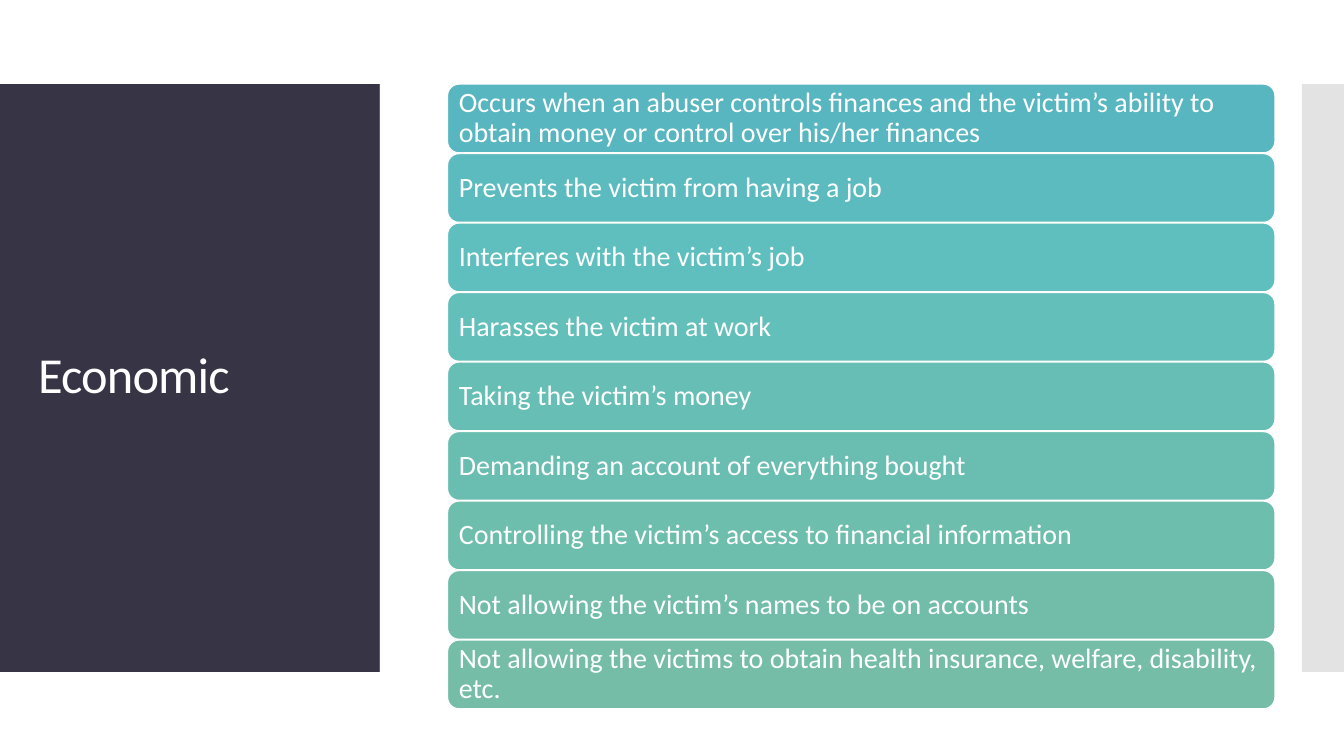
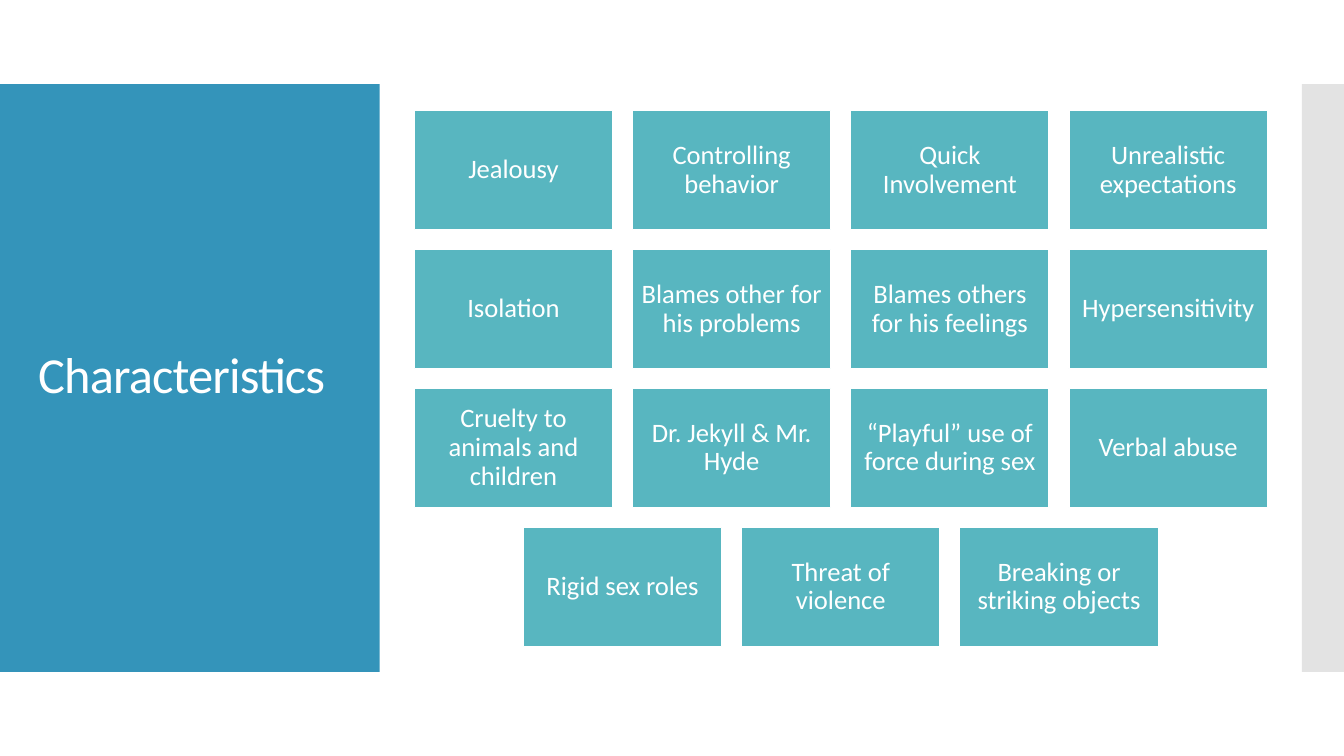
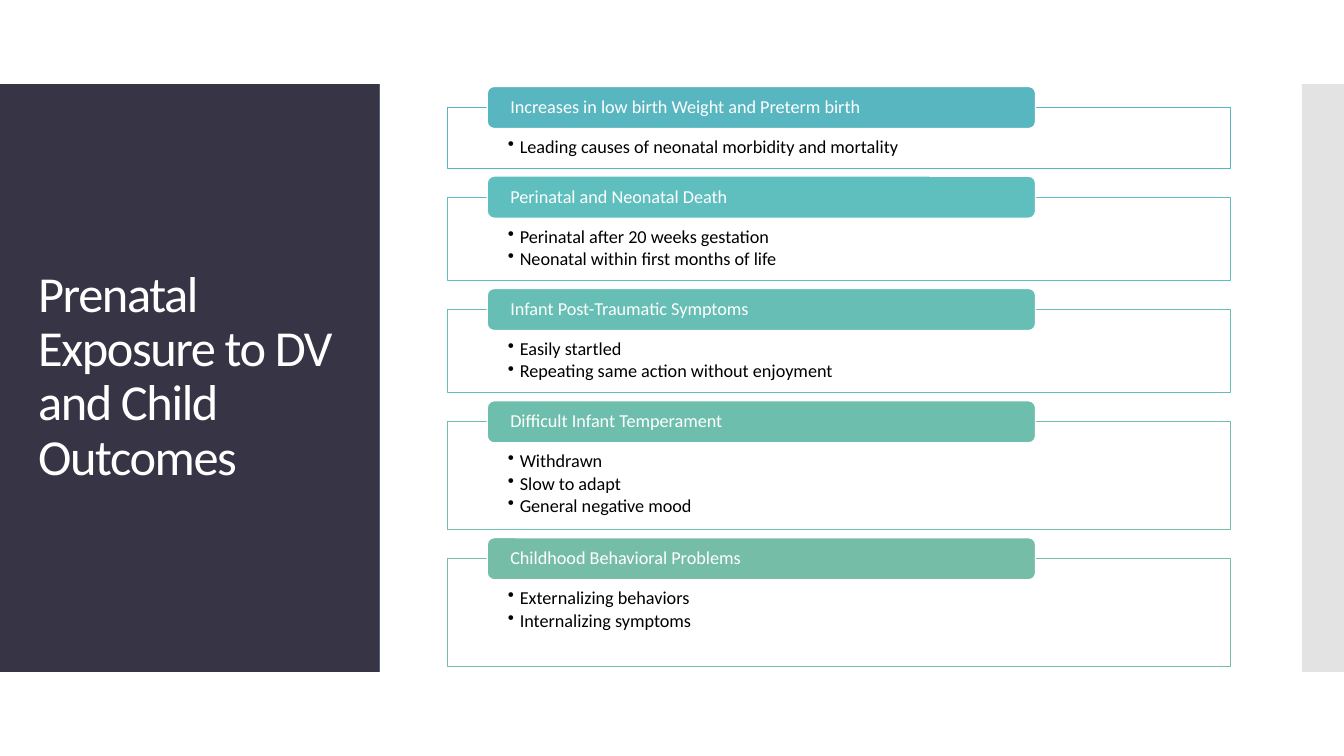
from pptx import Presentation
from pptx.dml.color import RGBColor
from pptx.enum.shapes import MSO_SHAPE
from pptx.enum.text import MSO_ANCHOR, MSO_AUTO_SIZE, PP_ALIGN
from pptx.oxml.ns import qn
from pptx.util import Cm, Pt
from lxml.etree import SubElement

FONT = "Calibri"
WHITE = RGBColor(0xFF, 0xFF, 0xFF)
BLACK = RGBColor(0, 0, 0)
BLUE = RGBColor(0x34, 0x94, 0xBA)
DARK = RGBColor(0x37, 0x35, 0x45)
GREY = RGBColor(0xC8, 0xC8, 0xC8)
RAMP = [
    RGBColor(0x58, 0xB6, 0xC0),
    RGBColor(0x5C, 0xBB, 0xBF),
    RGBColor(0x5F, 0xBF, 0xBF),
    RGBColor(0x63, 0xBF, 0xBA),
    RGBColor(0x67, 0xBE, 0xB5),
    RGBColor(0x6A, 0xBE, 0xB1),
    RGBColor(0x6E, 0xBE, 0xAD),
    RGBColor(0x72, 0xBD, 0xAA),
    RGBColor(0x75, 0xBD, 0xA7),
]
PANEL = (0, 2.12, 9.57, 14.81)
STRIP = (32.81, 2.12, 1.06, 14.81)
TITLE = (0.71, 3.12, 8.18, 12.78)

SIGNS = [
    "Occurs when an abuser controls finances and the victim’s ability to "
    "obtain money or control over his/her finances",
    "Prevents the victim from having a job",
    "Interferes with the victim’s job",
    "Harasses the victim at work",
    "Taking the victim’s money",
    "Demanding an account of everything bought",
    "Controlling the victim’s access to financial information",
    "Not allowing the victim’s names to be on accounts",
    "Not allowing the victims to obtain health insurance, welfare, disability, etc.",
]
TRAITS = [
    ["Jealousy", "Controlling behavior", "Quick Involvement", "Unrealistic expectations"],
    ["Isolation", "Blames other for his problems", "Blames others for his feelings",
     "Hypersensitivity"],
    ["Cruelty to animals and children", "Dr. Jekyll & Mr. Hyde",
     "“Playful” use of force during sex", "Verbal abuse"],
    ["Rigid sex roles", "Threat of violence", "Breaking or striking objects"],
]
EFFECTS = [
    ("Increases in low birth Weight and Preterm birth", 1.53,
     ["Leading causes of neonatal morbidity and mortality"]),
    ("Perinatal and Neonatal Death", 2.1,
     ["Perinatal after 20 weeks gestation", "Neonatal within first months of life"]),
    ("Infant Post-Traumatic Symptoms", 2.1,
     ["Easily startled", "Repeating same action without enjoyment"]),
    ("Difficult Infant Temperament", 2.72,
     ["Withdrawn", "Slow to adapt", "General negative mood"]),
    ("Childhood Behavioral Problems", 2.72,
     ["Externalizing behaviors", "Internalizing symptoms"]),
]


def add_box(slide, kind, box, fill, line=None, alpha=None):
    shape = slide.shapes.add_shape(kind, *map(Cm, box))
    shape.shadow.inherit = False
    shape.fill.solid()
    shape.fill.fore_color.rgb = fill
    if alpha:
        tone = shape.element.spPr.find(qn("a:solidFill"))[0]
        SubElement(tone, qn("a:alpha")).set("val", str(alpha * 1000))
    if line is None:
        shape.line.fill.background()
    else:
        shape.line.color.rgb = line
        shape.line.width = Pt(0.85)
    return shape


def set_text(shape, lines, size, color, pads, align=PP_ALIGN.LEFT, anchor=MSO_ANCHOR.MIDDLE):
    frame = shape.text_frame
    frame.word_wrap = True
    frame.auto_size = MSO_AUTO_SIZE.NONE
    frame.vertical_anchor = anchor
    frame.margin_left, frame.margin_top, frame.margin_right, frame.margin_bottom = map(Cm, pads)
    frame.text = "\n".join(lines)
    for para in frame.paragraphs:
        para.alignment = align
        para.line_spacing = 0.9
        for run in para.runs:
            run.font.name = FONT
            run.font.size = Pt(size)
            run.font.color.rgb = color
    return frame


def add_bands(slide, layout):
    tree = layout.placeholders[0].element.getparent()
    for box, fill, alpha in ((PANEL, BLUE, None), (STRIP, GREY, 50)):
        tree.append(add_box(slide, MSO_SHAPE.RECTANGLE, box, fill, alpha=alpha).element)


def add_title(slide, text, space, cover=None):
    title = slide.shapes.title
    if cover is not None:
        panel = add_box(slide, MSO_SHAPE.RECTANGLE, PANEL, cover)
        title.element.addprevious(panel.element)
    title.left, title.top, title.width, title.height = map(Cm, TITLE)
    frame = set_text(title, [text], 36, WHITE, (0.25, 0.13, 0.25, 0.13))
    for run in frame.paragraphs[0].runs:
        run.font._element.set("spc", str(space))


def add_stack(slide, box, items):
    left, top, width, height = box
    gap = 0.02
    tall = (height - gap * (len(items) - 1)) / len(items)
    for row, (text, fill) in enumerate(zip(items, RAMP)):
        place = (left, top + row * (tall + gap), width, tall)
        bar = add_box(slide, MSO_SHAPE.ROUNDED_RECTANGLE, place, fill, WHITE)
        set_text(bar, [text], 20, WHITE, (0.2,) * 4)


def add_grid(slide, box, rows):
    left, top, width, height = box
    gap = 0.5
    most = max(map(len, rows))
    wide = (width - gap * (most - 1)) / most
    tall = (height - gap * (len(rows) - 1)) / len(rows)
    for row, texts in enumerate(rows):
        start = left + (most - len(texts)) * (wide + gap) / 2
        for col, text in enumerate(texts):
            place = (start + col * (wide + gap), top + row * (tall + gap), wide, tall)
            tile = add_box(slide, MSO_SHAPE.RECTANGLE, place, RAMP[0], WHITE)
            set_text(tile, [text], 19, WHITE, (0.2,) * 4, PP_ALIGN.CENTER)


def add_bullet(para):
    para.space_after = Pt(2)
    props = para._p.get_or_add_pPr()
    props.set("marL", str(Cm(0.3)))
    props.set("indent", str(Cm(-0.3)))
    SubElement(props, qn("a:buChar")).set("char", "•")


def add_cards(slide, box, items):
    left, top, width = box
    for (head, tall, points), tone in zip(items, RAMP[::2]):
        card = add_box(slide, MSO_SHAPE.RECTANGLE, (left, top, width, tall), WHITE, tone, 90)
        frame = set_text(card, points, 13, BLACK, (1.52, 0.76, 1.52, 0.25),
                         anchor=MSO_ANCHOR.TOP)
        for para in frame.paragraphs:
            add_bullet(para)
        place = (left + 1, top - 0.53, width * 0.7, 1.06)
        label = add_box(slide, MSO_SHAPE.ROUNDED_RECTANGLE, place, tone, WHITE)
        set_text(label, [head], 13, WHITE, (0.53, 0, 0.53, 0))
        top += tall + 0.73


def main():
    deck = Presentation()
    deck.slide_width, deck.slide_height = Cm(33.87), Cm(19.05)
    layout = deck.slide_layouts[5]
    money, traits, births = [deck.slides.add_slide(layout) for _ in range(3)]
    add_bands(money, layout)

    add_title(money, "Economic", -60, DARK)
    add_stack(money, (11.28, 2.12, 20.85, 15.74), SIGNS)

    add_title(traits, "Characteristics", -60)
    add_grid(traits, (10.44, 2.79, 21.5, 13.5), TRAITS)

    add_title(births, "Prenatal Exposure to DV and Child Outcomes", -100, DARK)
    add_cards(births, (11.28, 2.71, 19.74), EFFECTS)

    deck.save("out.pptx")


if __name__ == "__main__":
    main()
